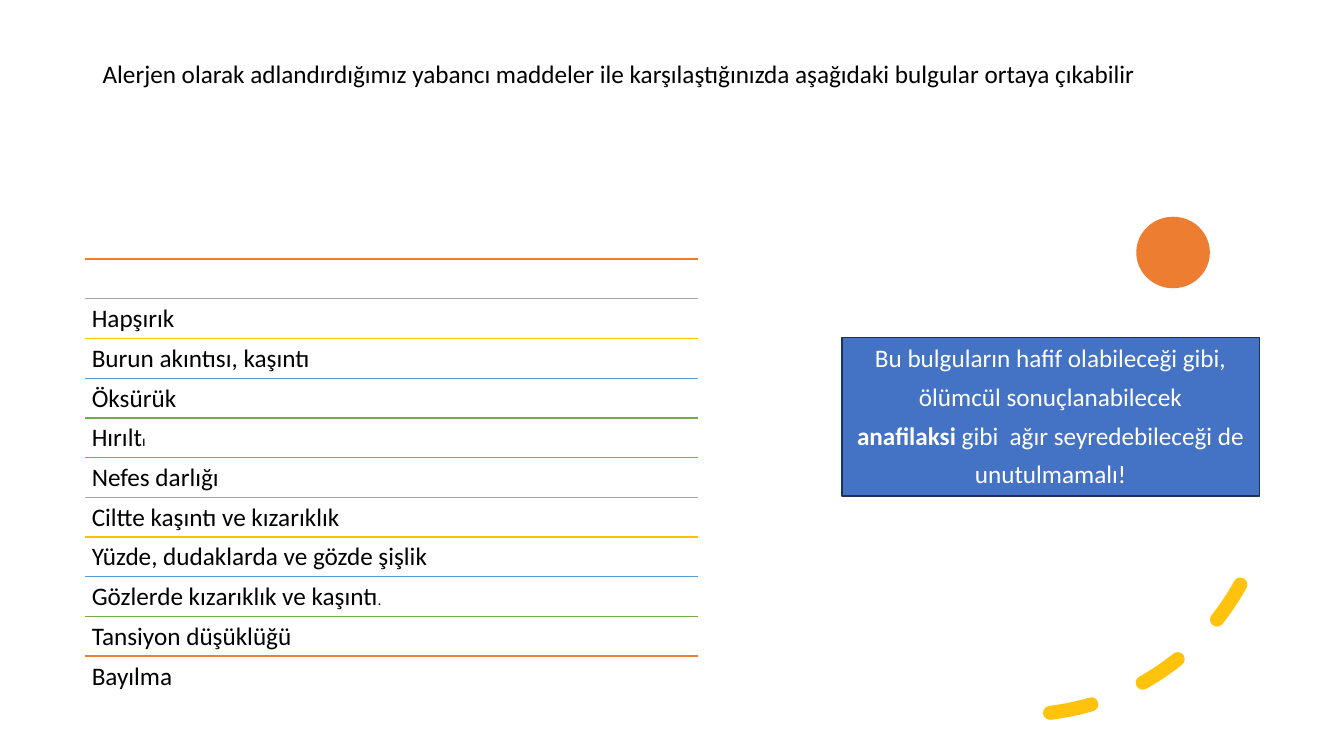
import pptx
import pptx.util
import pptx.dml.color
import pptx.enum.dml
import pptx.enum.shapes
import pptx.enum.text
import pptx.oxml.ns
from lxml import etree

Inches = pptx.util.Inches
Pt = pptx.util.Pt
RGBColor = pptx.dml.color.RGBColor
MSO_SHAPE = pptx.enum.shapes.MSO_SHAPE
qn = pptx.oxml.ns.qn

BLACK = RGBColor(0x00, 0x00, 0x00)
WHITE = RGBColor(0xFF, 0xFF, 0xFF)
BLUE = RGBColor(0x44, 0x72, 0xC4)
NAVY = RGBColor(0x1E, 0x32, 0x56)
ORANGE = RGBColor(0xED, 0x7D, 0x31)
GRAY = RGBColor(0xA5, 0xA5, 0xA5)
GOLD = RGBColor(0xFF, 0xC0, 0x00)
SKY = RGBColor(0x5B, 0x9B, 0xD5)
GREEN = RGBColor(0x70, 0xAD, 0x47)
RULE_COLORS = [ORANGE, GRAY, GOLD, SKY, GREEN]

TITLE = ("Alerjen olarak adlandırdığımız yabancı maddeler ile karşılaştığınızda "
         "aşağıdaki bulgular ortaya çıkabilir")
# Each symptom is a list of (text, size); the first row holds only its rule.
SYMPTOMS = [
    [],
    [("Hapşırık", 18)],
    [("Burun akıntısı, kaşıntı", 18)],
    [("Öksürük", 18)],
    [("Hırılt", 18), ("ı", 11)],
    [("Nefes darlığı", 18)],
    [("Ciltte kaşıntı ve kızarıklık", 18)],
    [("Yüzde, dudaklarda ve gözde şişlik", 18)],
    [("Gözlerde kızarıklık ve kaşıntı", 18), (".", 11)],
    [("Tansiyon düşüklüğü", 18)],
    [("Bayılma", 18)],
]
WARNING = [
    [("Bu bulguların hafif olabileceği gibi,", False)],
    [("ölümcül sonuçlanabilecek", False)],
    [("anafilaksi", True), (" gibi  ağır seyredebileceği de", False)],
    [("unutulmamalı!", False)],
]


def add_run(paragraph, text, size, color, bold=False):
    run = paragraph.add_run()
    run.text = text
    run.font.name = "Calibri"
    run.font.size = Pt(size)
    run.font.bold = bold
    run.font.color.rgb = color


presentation = pptx.Presentation()
presentation.slide_width = Inches(13.33)
presentation.slide_height = Inches(7.5)
slide = presentation.slides.add_slide(presentation.slide_layouts[6])

# Title
title = slide.shapes.add_textbox(Inches(0.92), Inches(0.4), Inches(11.5), Inches(1.45))
title.text_frame.word_wrap = True
title.text_frame.margin_top = Inches(0.21)
title.text_frame.paragraphs[0].line_spacing = 0.9
add_run(title.text_frame.paragraphs[0], TITLE, 18, BLACK)

# Warning box
warning = slide.shapes.add_shape(
    MSO_SHAPE.RECTANGLE, Inches(8.35), Inches(3.35), Inches(4.14), Inches(1.57))
warning.shadow.inherit = False
warning.fill.solid()
warning.fill.fore_color.rgb = BLUE
warning.line.color.rgb = NAVY
warning.line.width = Pt(1)
frame = warning.text_frame
frame.word_wrap = True
frame.auto_size = pptx.enum.text.MSO_AUTO_SIZE.SHAPE_TO_FIT_TEXT
frame.vertical_anchor = pptx.enum.text.MSO_ANCHOR.TOP
for index, parts in enumerate(WARNING):
    paragraph = frame.add_paragraph() if index else frame.paragraphs[0]
    paragraph.alignment = pptx.enum.text.PP_ALIGN.CENTER
    paragraph.space_after = Pt(6)
    for text, bold in parts:
        add_run(paragraph, text, 18, WHITE, bold)

# Dashed arc, mirrored top to bottom
arc = slide.shapes.add_shape(
    MSO_SHAPE.ARC, Inches(7.63), Inches(2.11), Inches(4.98), Inches(4.98))
arc.shadow.inherit = False
arc.adjustments[0] = 162
arc.adjustments[1] = 200.931
arc.rotation = 353.2
arc.element.spPr.find(qn("a:xfrm")).set("flipV", "1")
arc.fill.background()
arc.line.color.rgb = GOLD
arc.line.width = Pt(10)
arc.line.dash_style = pptx.enum.dml.MSO_LINE.DASH
arc_line = arc.element.spPr.find(qn("a:ln"))
arc_line.set("cap", "rnd")
etree.SubElement(next(arc_line.iter(qn("a:srgbClr"))), qn("a:alpha"), val="95000")

# Dot
dot = slide.shapes.add_shape(
    MSO_SHAPE.OVAL, Inches(11.27), Inches(2.15), Inches(0.73), Inches(0.71))
dot.shadow.inherit = False
dot.fill.solid()
dot.fill.fore_color.rgb = ORANGE
dot.line.fill.background()

# Symptom list
list_left, list_top = Inches(0.84), Inches(2.57)
list_width, row_height = Inches(6.08), Inches(3.94) // 10
symptom_list = slide.shapes.add_group_shape()
for row, parts in enumerate(SYMPTOMS):
    top = list_top + row * row_height
    rule = symptom_list.shapes.add_connector(
        pptx.enum.shapes.MSO_CONNECTOR.STRAIGHT,
        list_left, top, list_left + list_width, top)
    rule.line.color.rgb = RULE_COLORS[row % len(RULE_COLORS)]
    rule.line.width = Pt(1)
    etree.SubElement(rule.element.spPr, qn("a:effectLst"))
    if not parts:
        continue
    label = symptom_list.shapes.add_textbox(list_left, top, list_width, row_height)
    frame = label.text_frame
    frame.word_wrap = True
    frame.margin_left = frame.margin_right = Inches(0.07)
    frame.margin_top = frame.margin_bottom = Inches(0.07)
    frame.paragraphs[0].line_spacing = 0.9
    for text, size in parts:
        add_run(frame.paragraphs[0], text, size, BLACK)

presentation.save("out.pptx")
